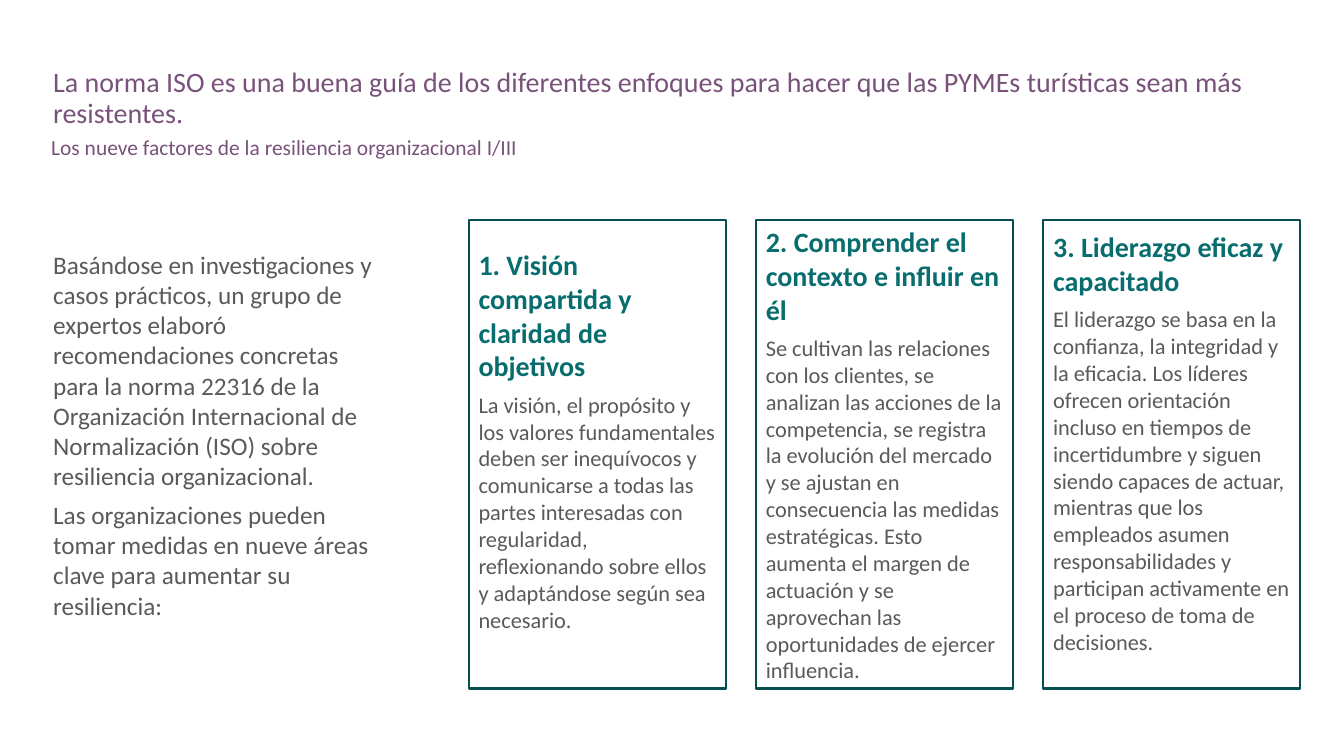
"""Build the slide on the first three factors of organizational resilience."""
from dataclasses import dataclass

from pptx import Presentation
from pptx.dml.color import RGBColor
from pptx.enum.shapes import MSO_SHAPE
from pptx.enum.text import MSO_ANCHOR, PP_ALIGN
from pptx.slide import Slide
from pptx.text.text import TextFrame
from pptx.util import Cm, Pt

RECTANGLE = MSO_SHAPE.RECTANGLE
TOP = MSO_ANCHOR.TOP
MIDDLE = MSO_ANCHOR.MIDDLE
LEFT = PP_ALIGN.LEFT

PURPLE = RGBColor(0x79, 0x52, 0x7B)
GREY = RGBColor(0x59, 0x5A, 0x59)
TEAL = RGBColor(0x08, 0x6D, 0x6E)
DARK_TEAL = RGBColor(0x05, 0x4F, 0x50)
FONT = "Calibri"

FACTOR_LEFT, FACTOR_TOP = 11.81, 5.54
FACTOR_WIDTH, FACTOR_HEIGHT = 6.48, 11.81
FACTOR_PITCH = 7.24
SIDE_INSET, EDGE_INSET = 0.25, 0.13


@dataclass(frozen=True)
class Passage:
    text: str
    size: float
    color: RGBColor
    bold: bool = False
    space_before: float = 0
    line_spacing: float = 1.0


@dataclass(frozen=True)
class TextArea:
    left: float
    top: float
    width: float
    height: float
    anchor: MSO_ANCHOR
    passages: tuple[Passage, ...]


@dataclass(frozen=True)
class Factor:
    heading: str
    description: str
    room_below: float = 0


TEXT_AREAS = (
    TextArea(1.09, 1.6, 31.85, 1.63, TOP, (
        Passage("La norma ISO es una buena guía de los diferentes enfoques para hacer que "
                "las PYMEs turísticas sean más resistentes.", 20, PURPLE, line_spacing=0.9),
    )),
    TextArea(1.04, 3.43, 31.9, 0.71, TOP, (
        Passage("Los nueve factores de la resiliencia organizacional I/III",
                15.3, PURPLE, line_spacing=0.7),
    )),
    TextArea(1.09, 4.55, 8.86, 12.8, MIDDLE, (
        Passage("Basándose en investigaciones y casos prácticos, un grupo de expertos elaboró "
                "recomendaciones concretas para la norma 22316 de la Organización "
                "Internacional de Normalización (ISO) sobre resiliencia organizacional.",
                18, GREY),
        Passage("Las organizaciones pueden tomar medidas en nueve áreas clave para aumentar "
                "su resiliencia:", 18, GREY, space_before=6),
    )),
)

FACTORS = (
    Factor("1. Visión compartida y claridad de objetivos",
           "La visión, el propósito y los valores fundamentales deben ser inequívocos y "
           "comunicarse a todas las partes interesadas con regularidad, reflexionando sobre "
           "ellos y adaptándose según sea necesario.", room_below=0.7),
    Factor("2. Comprender el contexto e influir en él",
           "Se cultivan las relaciones con los clientes, se analizan las acciones de la "
           "competencia, se registra la evolución del mercado y se ajustan en consecuencia "
           "las medidas estratégicas. Esto aumenta el margen de actuación y se aprovechan "
           "las oportunidades de ejercer influencia."),
    Factor("3. Liderazgo eficaz y capacitado",
           "El liderazgo se basa en la confianza, la integridad y la eficacia. Los líderes "
           "ofrecen orientación incluso en tiempos de incertidumbre y siguen siendo capaces "
           "de actuar, mientras que los empleados asumen responsabilidades y participan "
           "activamente en el proceso de toma de decisiones.", room_below=0.6),
)


def write_passages(frame: TextFrame, passages: tuple[Passage, ...],
                   anchor: MSO_ANCHOR, room_below: float = 0) -> None:
    frame.word_wrap = True
    frame.vertical_anchor = anchor
    frame.margin_left = frame.margin_right = Cm(SIDE_INSET)
    frame.margin_top = Cm(EDGE_INSET)
    frame.margin_bottom = Cm(EDGE_INSET + room_below)
    for index, passage in enumerate(passages):
        paragraph = frame.add_paragraph() if index else frame.paragraphs[0]
        paragraph.text = passage.text
        paragraph.alignment = LEFT
        paragraph.line_spacing = passage.line_spacing
        if passage.space_before:
            paragraph.space_before = Pt(passage.space_before)
        paragraph.font.name = FONT
        paragraph.font.size = Pt(passage.size)
        paragraph.font.bold = passage.bold
        paragraph.font.color.rgb = passage.color


def draw_text_area(slide: Slide, area: TextArea) -> None:
    box = slide.shapes.add_textbox(Cm(area.left), Cm(area.top), Cm(area.width), Cm(area.height))
    write_passages(box.text_frame, area.passages, area.anchor)


def draw_factor(slide: Slide, factor: Factor, column: int) -> None:
    card = slide.shapes.add_shape(
        RECTANGLE, Cm(FACTOR_LEFT + column * FACTOR_PITCH), Cm(FACTOR_TOP),
        Cm(FACTOR_WIDTH), Cm(FACTOR_HEIGHT))
    card.shadow.inherit = False
    card.fill.background()
    card.line.color.rgb = DARK_TEAL
    card.line.width = Pt(1.5)
    passages = (
        Passage(factor.heading, 20, TEAL, bold=True),
        Passage(factor.description, 16, GREY, space_before=6),
    )
    write_passages(card.text_frame, passages, MIDDLE, factor.room_below)


def main() -> None:
    presentation = Presentation()
    presentation.slide_width = Cm(33.87)
    presentation.slide_height = Cm(19.05)
    slide = presentation.slides.add_slide(presentation.slide_layouts[6])
    for area in TEXT_AREAS:
        draw_text_area(slide, area)
    for column, factor in enumerate(FACTORS):
        draw_factor(slide, factor, column)
    presentation.save("out.pptx")


if __name__ == "__main__":
    main()
